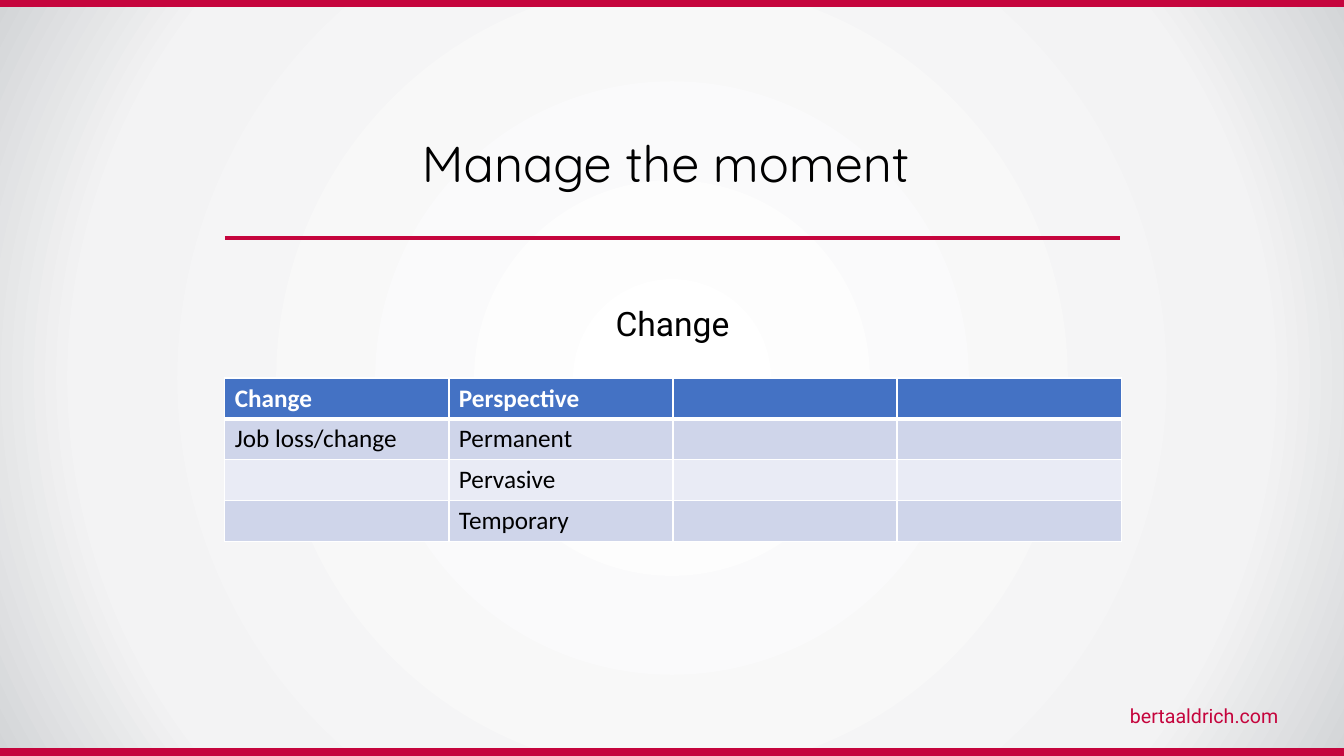
from lxml import etree
from pptx import Presentation
from pptx import util as u
from pptx.dml.color import RGBColor
from pptx.enum import shapes, text
from pptx.oxml import ns

CRIMSON = RGBColor(0xC5, 0x05, 0x3D)
BLACK = RGBColor(0, 0, 0)
WHITE = RGBColor(0xFF, 0xFF, 0xFF)
HEADER_BLUE = RGBColor(0x44, 0x72, 0xC4)
BAND_DARK = RGBColor(0xCF, 0xD5, 0xEA)
BAND_LIGHT = RGBColor(0xE9, 0xEB, 0xF5)
GLOW = ((0, WHITE), (77, RGBColor(0xF3, 0xF3, 0xF4)), (100, RGBColor(0xD3, 0xD5, 0xD7)))
ROWS = (
    ("Change", "Perspective", "", ""),
    ("Job loss/change", "Permanent", "", ""),
    ("", "Pervasive", "", ""),
    ("", "Temporary", "", ""),
)


def add_child(parent, tag, **attributes):
    return etree.SubElement(parent, ns.qn(tag), attributes)


def place(part, left, top, width, height):
    part.left, part.top = u.Inches(left), u.Inches(top)
    part.width, part.height = u.Inches(width), u.Inches(height)


def style(paragraph, font_name, size, color, bold=False):
    for run in paragraph.runs:
        run.font.name = font_name
        run.font.size = u.Pt(size)
        run.font.color.rgb = color
        run.font.bold = bold


def paint_background(slide):
    slide.background.fill.gradient()
    gradient = slide.element.xpath(".//p:bg//a:gradFill")[0]
    for child in list(gradient):
        gradient.remove(child)
    stops = add_child(gradient, "a:gsLst")
    for percent, color in GLOW:
        stop = add_child(stops, "a:gs", pos=str(percent * 1000))
        add_child(stop, "a:srgbClr", val=str(color))
    radial = add_child(gradient, "a:path", path="circle")
    add_child(radial, "a:fillToRect", l="50000", t="50000", r="50000", b="50000")


def add_edge_bar(slide, left, top, width, height):
    bar = slide.shapes.add_shape(
        shapes.MSO_SHAPE.RECTANGLE, *map(u.Inches, (left, top, width, height)))
    bar.shadow.inherit = False
    bar.fill.solid()
    bar.fill.fore_color.rgb = CRIMSON
    bar.line.color.rgb = CRIMSON
    bar.line.width = u.Pt(1)


def add_website(slide, left, top, width, height):
    website = slide.shapes.add_textbox(*map(u.Inches, (left, top, width, height)))
    website.text_frame.word_wrap = True
    address = website.text_frame.paragraphs[0]
    address.text = "bertaaldrich.com"
    address.alignment = text.PP_ALIGN.RIGHT
    style(address, "Roboto", 14, CRIMSON)


def fill_heading(placeholder, wording, font_name, size, anchor, box):
    place(placeholder, *box)
    frame = placeholder.text_frame
    frame.text = wording
    frame.word_wrap = True
    frame.auto_size = text.MSO_AUTO_SIZE.NONE
    frame.vertical_anchor = anchor
    heading = frame.paragraphs[0]
    properties = heading._p.get_or_add_pPr()
    properties.set("marL", "0")
    properties.set("indent", "0")
    add_child(properties, "a:buNone")
    heading.alignment = text.PP_ALIGN.CENTER
    heading.line_spacing = 0.9
    heading.space_before = u.Pt(0)
    style(heading, font_name, size, BLACK)


def add_divider(slide, left, top, width):
    divider = slide.shapes.add_connector(
        shapes.MSO_CONNECTOR.STRAIGHT, *map(u.Inches, (left, top, left + width, top)))
    divider.line.color.rgb = CRIMSON
    divider.line.width = u.Pt(3)
    add_child(divider._element.spPr, "a:effectLst")


def add_border(cell, side, width):
    border = add_child(cell._tc.get_or_add_tcPr(), side, w=str(u.Pt(width)))
    solid = add_child(border, "a:solidFill")
    add_child(solid, "a:srgbClr", val=str(WHITE))


def add_change_table(slide, left, top, width, height):
    table = slide.shapes.add_table(
        len(ROWS), len(ROWS[0]), *map(u.Inches, (left, top, width, height))).table
    for row, entries in enumerate(ROWS):
        is_header = row == 0
        band = HEADER_BLUE if is_header else BAND_DARK if row % 2 else BAND_LIGHT
        borders = {"a:lnL": 1, "a:lnR": 1,
                   "a:lnT": 3 if row == 1 else 1, "a:lnB": 3 if is_header else 1}
        for column, entry in enumerate(entries):
            cell = table.cell(row, column)
            for side, thickness in borders.items():
                add_border(cell, side, thickness)
            cell.fill.solid()
            cell.fill.fore_color.rgb = band
            cell.text_frame.text = entry
            style(cell.text_frame.paragraphs[0], "Calibri", 18,
                  WHITE if is_header else BLACK, is_header)


def build_change_slide(deck):
    slide = deck.slides.add_slide(deck.slide_layouts[1])
    paint_background(slide)
    for top in (7.43, -0.01):
        add_edge_bar(slide, 0, top, 13.33, 0.07)
    add_website(slide, 9.5, 6.93, 3.28, 0.34)
    fill_heading(slide.shapes.title, "Manage the moment ", "Quicksand", 36,
                 text.MSO_ANCHOR.MIDDLE, (2.23, 1.35, 8.88, 0.59))
    fill_heading(slide.placeholders[1], "Change", "Roboto", 24,
                 text.MSO_ANCHOR.TOP, (0.92, 3, 11.5, 3.13))
    add_divider(slide, 2.23, 2.36, 8.88)
    add_change_table(slide, 2.23, 3.75, 8.89, 1.62)


def main():
    deck = Presentation()
    deck.slide_width, deck.slide_height = u.Inches(13.33), u.Inches(7.5)
    build_change_slide(deck)
    deck.save("out.pptx")


if __name__ == "__main__":
    main()
